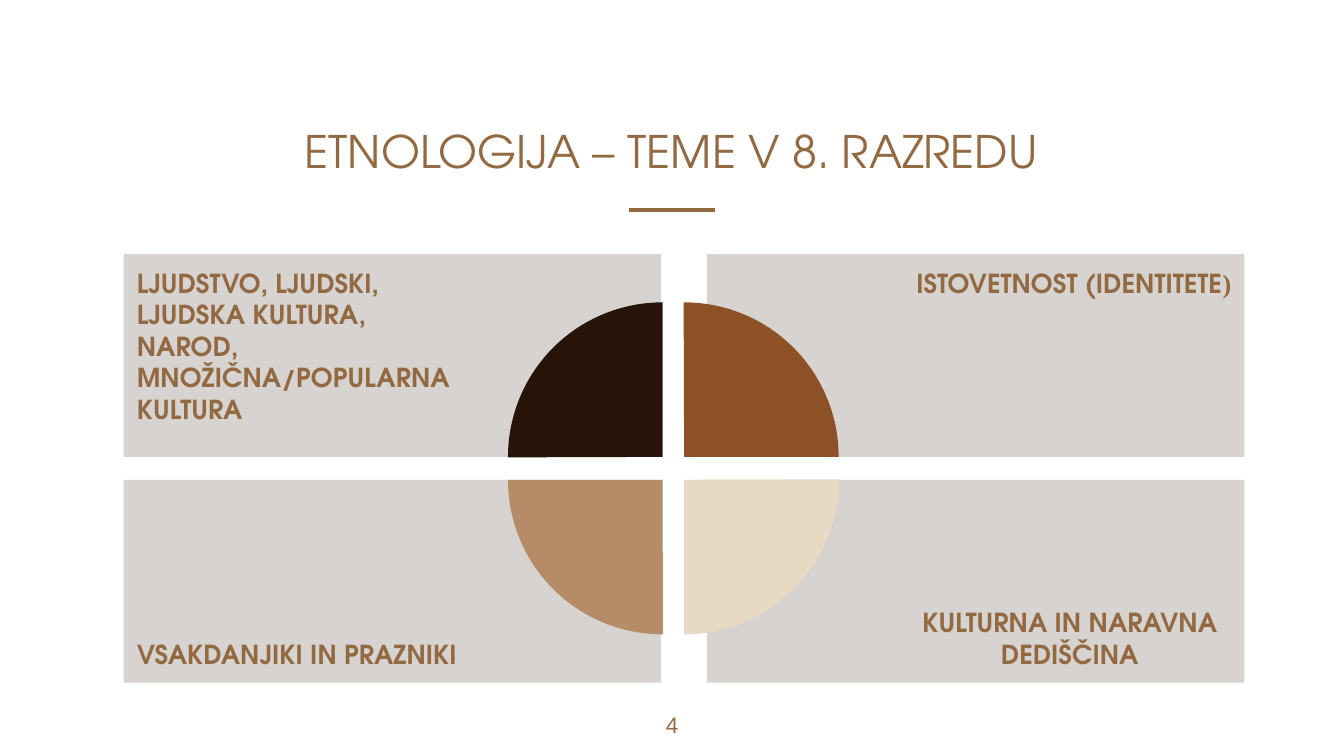
from lxml.etree import SubElement
from pptx import Presentation
from pptx.dml.color import RGBColor
from pptx.enum.shapes import MSO_CONNECTOR, MSO_SHAPE
from pptx.enum.text import MSO_ANCHOR, PP_ALIGN
from pptx.oxml.ns import qn
from pptx.util import Inches, Pt

BRONZE = RGBColor(0x92, 0x69, 0x40)
UMBER = RGBColor(0x40, 0x32, 0x28)
ESPRESSO = RGBColor(0x26, 0x14, 0x08)
RUST = RGBColor(0x8E, 0x50, 0x25)
CREAM = RGBColor(0xE8, 0xDA, 0xC2)
TAN = RGBColor(0xB6, 0x8C, 0x68)

HEADING_FONT = "TeX Gyre Adventor"
BRACKET_FONT = "Times New Roman"
PANEL_OPACITY = 21000
PADDING = 0.1
WHEEL_SIDE = 1.5

THEMES = [
    (0, 0, ["LJUDSTVO, LJUDSKI, LJUDSKA KULTURA, NAROD, MNOŽIČNA/POPULARNA KULTURA"], PP_ALIGN.LEFT),
    (0, 1, ["ISTOVETNOST (IDENTITETE", ")"], PP_ALIGN.RIGHT),
    (1, 0, ["VSAKDANJIKI IN PRAZNIKI"], PP_ALIGN.LEFT),
    (1, 1, ["KULTURNA IN NARAVNA DEDIŠČINA"], PP_ALIGN.CENTER),
]
QUARTERS = [(0, 0, ESPRESSO), (0, 1, RUST), (1, 1, CREAM), (1, 0, TAN)]


def style_run(span, size, font_name, bold=False):
    """Give a run its size, font and the bronze text colour."""
    span.font.size = Pt(size)
    span.font.name = font_name
    span.font.bold = bold
    span.font.color.rgb = BRONZE


def set_frame(frame, anchor, left=PADDING, right=PADDING):
    """Set wrapping, anchor and margins of a text frame."""
    frame.word_wrap = True
    frame.vertical_anchor = anchor
    frame.margin_left, frame.margin_right = Inches(left), Inches(right)
    frame.margin_top = frame.margin_bottom = Inches(PADDING)


def add_plain_shape(page, kind, box, color):
    """Add a flat filled shape without line or shadow."""
    shape = page.shapes.add_shape(kind, *map(Inches, box))
    shape.shadow.inherit = False
    shape.fill.solid()
    shape.fill.fore_color.rgb = color
    shape.line.fill.background()
    return shape


def add_centred_text(page, box, text, size, font_name, anchor):
    """Add a text box with one centred line."""
    frame = page.shapes.add_textbox(*map(Inches, box)).text_frame
    set_frame(frame, anchor)
    frame.text = text
    para = frame.paragraphs[0]
    para.alignment = PP_ALIGN.CENTER
    style_run(para.runs[0], size, font_name)


def add_heading(page, box):
    """Place the title and the short rule centred below it."""
    left, top, width, height = box
    add_centred_text(page, box, "ETNOLOGIJA – TEME V 8. RAZREDU", 24, HEADING_FONT, MSO_ANCHOR.BOTTOM)
    middle, rule_top = 5, top + height + 0.14
    rule = page.shapes.add_connector(
        MSO_CONNECTOR.STRAIGHT,
        *map(Inches, (middle - 0.32, rule_top, middle + 0.32, rule_top)))
    rule.line.color.rgb = BRONZE
    rule.line.width = Pt(2.25)
    SubElement(rule._element.spPr, qn("a:effectLst"))


def add_panels(page, box):
    """Place the four theme panels in a two by two grid."""
    left, top, width, height = box
    panel_width, panel_height = 4, 1.51
    for row, column, texts, alignment in THEMES:
        panel_box = (left + column * (width - panel_width),
                     top + row * (height - panel_height), panel_width, panel_height)
        panel = add_plain_shape(page, MSO_SHAPE.RECTANGLE, panel_box, UMBER)
        color = panel._element.spPr.find(qn("a:solidFill"))[0]
        SubElement(color, qn("a:alpha"), val=str(PANEL_OPACITY))
        frame = panel.text_frame
        margins = (WHEEL_SIDE, PADDING) if column else (PADDING, WHEEL_SIDE)
        set_frame(frame, MSO_ANCHOR.BOTTOM if row else MSO_ANCHOR.TOP, *margins)
        para = frame.paragraphs[0]
        para.alignment = alignment
        for text, font_name in zip(texts, (HEADING_FONT, BRACKET_FONT)):
            span = para.add_run()
            span.text = text
            style_run(span, 14, font_name, bold=True)


def add_wheel(page, box):
    """Place four quarter discs, turned clockwise around the centre."""
    left, top, width, height = box
    diameter = 2.3
    for turn, (row, column, color) in enumerate(QUARTERS):
        quarter_box = (left + column * (width - diameter),
                       top + row * (height - diameter), diameter, diameter)
        quarter = add_plain_shape(page, MSO_SHAPE.PIE, quarter_box, color)
        quarter.adjustments[0] = 107.89
        quarter.adjustments[1] = 162
        quarter.rotation = 90 * turn


def main():
    """Build the slide and save it."""
    deck = Presentation()
    deck.slide_width = Inches(10)
    deck.slide_height = deck.slide_width * 9 // 16
    page = deck.slides.add_slide(deck.slide_layouts[6])
    add_heading(page, (2.06, 0.48, 5.87, 0.94))
    add_centred_text(page, (4.7, 5.19, 0.6, 0.43), "4", 12, "Arial", MSO_ANCHOR.TOP)
    add_panels(page, (0.92, 1.89, 8.34, 3.19))
    add_wheel(page, (3.78, 2.25, 2.46, 2.47))
    deck.save("out.pptx")


if __name__ == "__main__":
    main()
